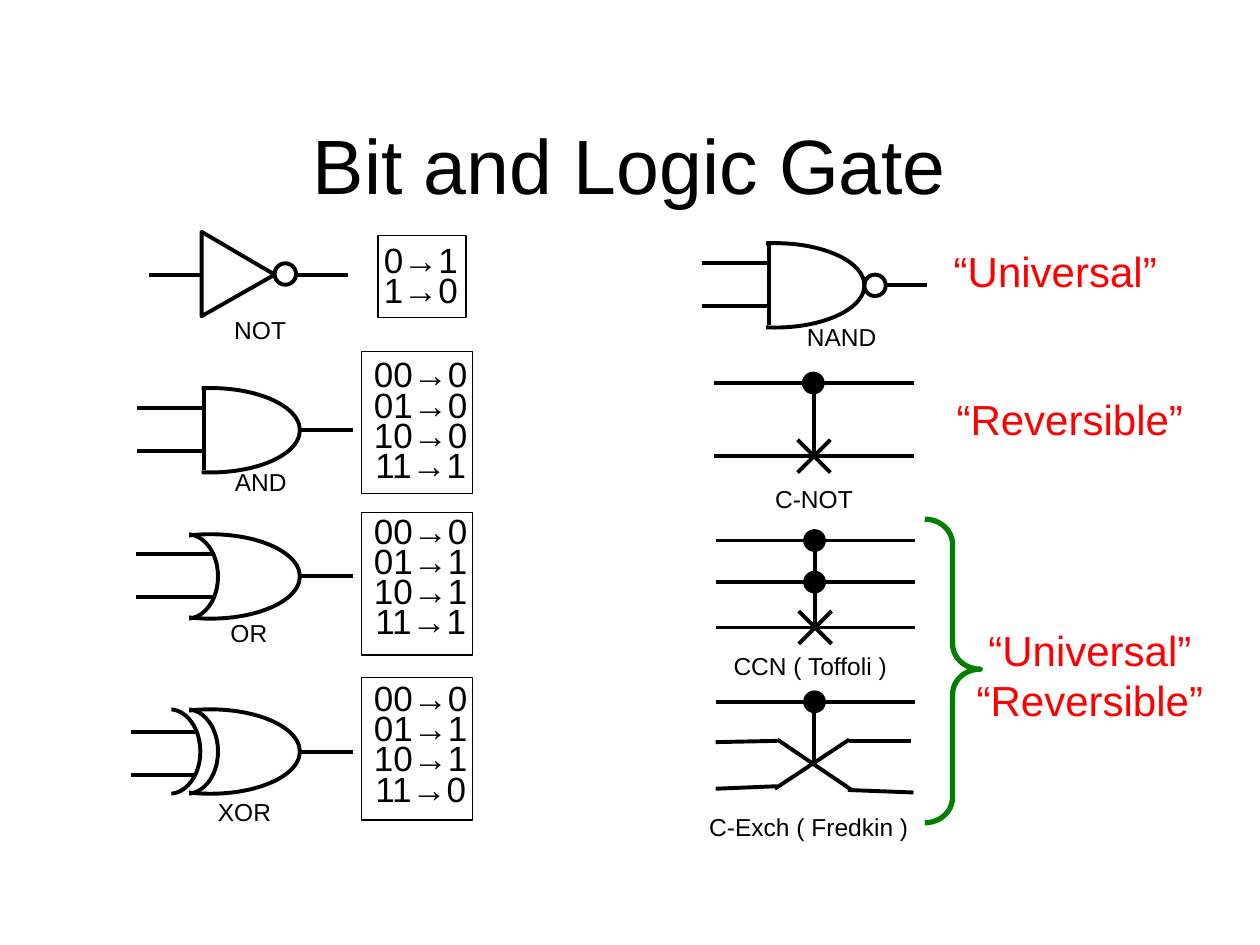
from lxml.etree import SubElement
from pptx import Presentation
from pptx.dml.color import RGBColor
from pptx.enum.shapes import MSO_CONNECTOR as Connector, MSO_SHAPE as Shape
from pptx.enum.text import MSO_ANCHOR as Anchor, PP_ALIGN as Align
from pptx.oxml.ns import qn
from pptx.util import Inches, Pt

BLACK = RGBColor(0, 0, 0)
WHITE = RGBColor(255, 255, 255)
RED = RGBColor(255, 0, 0)
GREEN = RGBColor(0, 128, 0)

TITLE = ("Bit and Logic Gate", (0.75, 0.67, 8.5, 1.25))
GATE_LABELS = [
    ("NOT", (1.76, 2.45, 0.61, 0.33)),
    ("AND", (1.76, 3.66, 0.62, 0.33)),
    ("OR", (1.73, 4.86, 0.49, 0.33)),
    ("XOR", (1.63, 6.28, 0.62, 0.33)),
    ("NAND", (6.3, 2.51, 0.76, 0.33)),
    ("C-NOT", (6.05, 3.79, 0.82, 0.33)),
    ("CCN ( Toffoli )", (5.72, 5.11, 1.42, 0.34)),
    ("C-Exch ( Fredkin )", (5.49, 6.4, 1.86, 0.33)),
]
PROPERTIES = [
    ("“Universal”", (7.43, 1.9, 1.89, 0.5)),
    ("“Reversible”", (7.48, 3.07, 2.02, 0.5)),
    ("“Universal”\n“Reversible”", (7.53, 4.9, 2.24, 0.91)),
]
TRUTH_TABLES = [
    ("0→1\n1→0", (2.76, 2.04, 1.16, 0.47), (3, 1.87, 0.7, 0.65)),
    ("00→0\n01→0\n10→0\n11→1", (2.76, 2.95, 1.16, 1), (2.87, 2.79, 0.88, 1.13)),
    ("00→0\n01→1\n10→1\n11→1", (2.76, 4.19, 1.16, 1.05), (2.87, 4.07, 0.88, 1.13)),
    ("00→0\n01→1\n10→1\n11→0", (2.76, 5.52, 1.16, 1), (2.87, 5.38, 0.88, 1.13)),
]
NOT_TRIANGLE = [(1.6, 1.84), (1.6, 2.51), (2.18, 2.18)]
NOT_WIRES = [(1.18, 2.18, 1.6, 2.18), (2.35, 2.18, 2.76, 2.18)]
BUBBLES = [(2.18, 2.09), (6.86, 2.18)]
FLAT_GATES = [(0.96, 3.08, 2.38), (5.44, 1.93, 7.03)]
CURVED_GATES = [
    {"top": 4.24, "backs": [1.24], "inputs": (1.08, 1.71), "drop": 0.16},
    {"top": 5.63, "backs": [1.24, 1.1], "inputs": (1.04, 1.55), "drop": 0.18},
]
CIRCUITS = [
    {"left": 5.67, "wires": [3.04, 3.62], "dots": [3.04], "control": (6.46, 3.04, 3.62), "cross": 3.62},
    {"left": 5.68, "wires": [4.29, 4.62, 4.98], "dots": [4.29, 4.62], "control": (6.47, 4.29, 4.95), "cross": 4.98},
    {"left": 5.68, "wires": [5.57], "dots": [5.57], "control": (6.46, 5.57, 6.04), "cross": None},
]
EXCHANGE_WIRES = [
    (5.68, 5.89, 6.17, 5.88), (6.17, 5.87, 6.76, 6.27), (6.73, 6.27, 7.25, 6.29),
    (5.68, 6.26, 6.17, 6.24), (6.15, 6.26, 6.74, 5.87), (6.74, 5.88, 7.23, 5.88),
]
BRACE = (7.34, 4.12, 0.44, 2.41)
BODY_WIDTH, BODY_HEIGHT, BACK_WIDTH, DOT = 1.42, 0.67, 0.49, 0.17
INPUT_GAP, WIRE_LENGTH, CROSS_REACH = 0.34, 1.58, 0.13

presentation = Presentation()
presentation.slide_width = Inches(10)
presentation.slide_height = Inches(7.5)
slide = presentation.slides.add_slide(presentation.slide_layouts[6])


def add_text(text, box, size, color=BLACK, anchor=Anchor.MIDDLE, wrap=False,
             line_spacing=None, space_before=0):
    frame = slide.shapes.add_textbox(*map(Inches, box)).text_frame
    frame.word_wrap = wrap
    frame.vertical_anchor = anchor
    for index, line in enumerate(text.split("\n")):
        paragraph = frame.paragraphs[0] if index == 0 else frame.add_paragraph()
        paragraph.text = line
        paragraph.alignment = Align.CENTER
        paragraph.line_spacing = line_spacing
        if index and space_before:
            paragraph.space_before = Pt(space_before)
        paragraph.font.name = "Arial"
        paragraph.font.size = Pt(size)
        paragraph.font.color.rgb = color


def style(shape, fill=None, line=BLACK, width=2.25):
    shape.shadow.inherit = False
    for part, color in ((shape.fill, fill), (shape.line.fill, line)):
        if color is None:
            part.background()
        else:
            part.solid()
            part.fore_color.rgb = color
    if line is not None:
        shape.line.width = Pt(width)


def add_shape(kind, box, **look):
    shape = slide.shapes.add_shape(kind, *map(Inches, box))
    style(shape, **look)
    return shape


def add_wire(*ends):
    wire = slide.shapes.add_connector(Connector.STRAIGHT, *map(Inches, ends))
    wire.line.color.rgb = BLACK
    wire.line.width = Pt(2.25)
    SubElement(wire._element.spPr, qn("a:effectLst"))


def add_gate_wires(top, inputs, drop, output):
    for y in (top + drop, top + drop + INPUT_GAP):
        add_wire(inputs[0], y, inputs[1], y)
    middle = top + BODY_HEIGHT / 2
    add_wire(output[0], middle, output[1], middle)


def add_flat_gate(left, top, output):
    back = left + 0.66
    add_shape(Shape.OVAL, (left, top, BODY_WIDTH, BODY_HEIGHT))
    add_wire(back, top - 0.02, back, top + 0.65)
    add_shape(Shape.RECTANGLE, (left - 0.36, top - 0.08, 1, 0.82), fill=WHITE, line=None)
    add_gate_wires(top, (left + 0.13, back), 0.16, (output, left + 1.84 if left < 5 else 7.36))


def add_curved_gate(top, backs, inputs, drop):
    add_shape(Shape.OVAL, (0.96, top, BODY_WIDTH, BODY_HEIGHT))
    for back in backs:
        add_shape(Shape.OVAL, (back, top, BACK_WIDTH, BODY_HEIGHT))
        add_shape(Shape.RECTANGLE, (back - 0.72, top - 0.06, 0.98, 0.78), fill=WHITE, line=None)
    add_gate_wires(top, inputs, drop, (2.38, 2.8))


def add_circuit(left, wires, dots, control, cross):
    x, start, end = control
    add_wire(x, start, x, end)
    for y in wires:
        add_wire(left, y, left + WIRE_LENGTH, y)
    for y in dots:
        add_shape(Shape.OVAL, (left + 0.7, y - DOT / 2, DOT, DOT), fill=BLACK, width=0.75)
    if cross is not None:
        for reach in (CROSS_REACH, -CROSS_REACH):
            add_wire(x - CROSS_REACH, cross - reach, x + CROSS_REACH, cross + reach)


add_text(*TITLE, size=44, wrap=True)

builder = slide.shapes.build_freeform(*map(Inches, NOT_TRIANGLE[0]))
builder.add_line_segments([tuple(map(Inches, point)) for point in NOT_TRIANGLE[1:]], close=True)
style(builder.convert_to_shape())
for wire_ends in NOT_WIRES + EXCHANGE_WIRES:
    add_wire(*wire_ends)
for flat_gate in FLAT_GATES:
    add_flat_gate(*flat_gate)
for curved_gate in CURVED_GATES:
    add_curved_gate(**curved_gate)
for bubble in BUBBLES:
    add_shape(Shape.OVAL, (*bubble, DOT, DOT))
for circuit in CIRCUITS:
    add_circuit(**circuit)

for table_text, text_box, border in TRUTH_TABLES:
    add_text(table_text, text_box, 20, anchor=Anchor.TOP, wrap=True, line_spacing=0.3, space_before=10)
    add_shape(Shape.RECTANGLE, border, width=0.75)
for label, label_box in GATE_LABELS:
    add_text(label, label_box, 14)
for label, label_box in PROPERTIES:
    add_text(label, label_box, 24, color=RED)

brace = add_shape(Shape.RIGHT_BRACE, BRACE, line=GREEN, width=3)
brace.adjustments[0] = 0.455
brace.adjustments[1] = 0.494

presentation.save("out.pptx")
